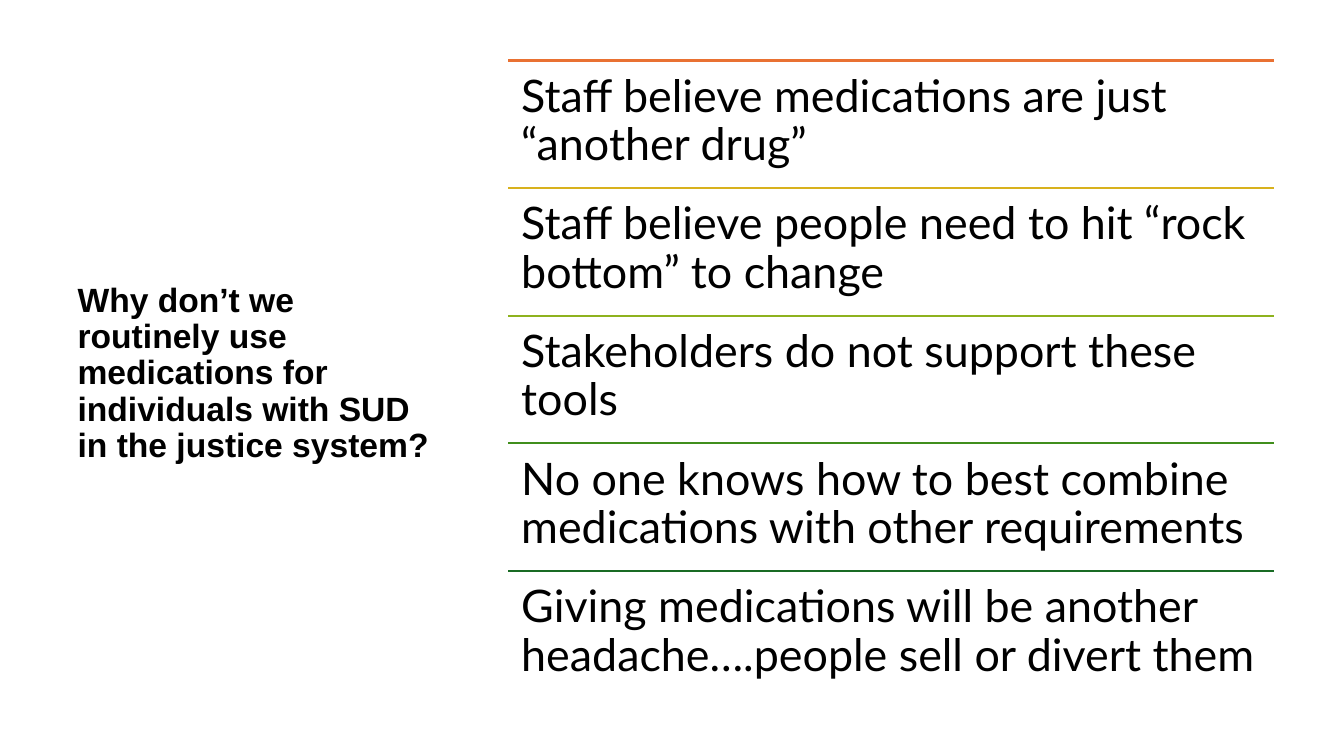
from dataclasses import dataclass

from lxml.etree import SubElement
from pptx import Presentation
from pptx.dml.color import RGBColor
from pptx.enum.shapes import MSO_CONNECTOR
from pptx.enum.text import MSO_ANCHOR, MSO_AUTO_SIZE, PP_ALIGN
from pptx.oxml.ns import qn
from pptx.util import Inches, Pt


@dataclass(frozen=True)
class Theme:
    text: str = "000000"
    title_font: str = "Arial"
    title_size: int = 24
    body_font: str = "Lato"
    body_size: int = 32
    rule_width: float = 1.5
    line_spacing: float = 0.9


@dataclass(frozen=True)
class Reason:
    text: str
    color: str


THEME = Theme()
TITLE = "Why don’t we routinely use medications for individuals with SUD in the justice system?"
REASONS = [
    Reason("Staff believe medications are just “another drug”", "E97132"),
    Reason("Staff believe people need to hit “rock bottom” to change", "D8B11D"),
    Reason("Stakeholders do not support these tools", "8EB21E"),
    Reason("No one knows how to best combine medications with other requirements", "408E1C"),
    Reason("Giving medications will be another headache….people sell or divert them", "196B24"),
]
TOP, HEIGHT = 0.6, 6.33
LIST_LEFT, LIST_WIDTH = 5.04, 7.6
ROW_HEIGHT = HEIGHT / len(REASONS)
INSET = 0.13


def write_text(tf, text: str, font: str, size: int, bold: bool = False) -> None:
    tf.text = text
    tf.word_wrap = True
    tf.auto_size = MSO_AUTO_SIZE.NONE
    p = tf.paragraphs[0]
    p.alignment = PP_ALIGN.LEFT
    p.line_spacing = THEME.line_spacing
    r = p.runs[0]
    r.font.name = font
    r.font.size = Pt(size)
    r.font.bold = bold
    r.font.color.rgb = RGBColor.from_string(THEME.text)


def add_title(slide) -> None:
    sp = slide.shapes.title
    sp.left, sp.top = Inches(0.67), Inches(TOP)
    sp.width, sp.height = Inches(3.82), Inches(HEIGHT)
    tf = sp.text_frame
    write_text(tf, TITLE, THEME.title_font, THEME.title_size, bold=True)
    tf.vertical_anchor = MSO_ANCHOR.MIDDLE
    tf.margin_top, tf.margin_bottom = Inches(0.05), Inches(0.16)


def add_reason(slide, reason: Reason, top: float) -> None:
    rule = slide.shapes.add_connector(
        MSO_CONNECTOR.STRAIGHT,
        Inches(LIST_LEFT), Inches(top), Inches(LIST_LEFT + LIST_WIDTH), Inches(top),
    )
    rule.line.color.rgb = RGBColor.from_string(reason.color)
    rule.line.width = Pt(THEME.rule_width)
    SubElement(rule._element.spPr, qn("a:effectLst"))

    sp = slide.shapes.add_textbox(
        Inches(LIST_LEFT), Inches(top), Inches(LIST_WIDTH), Inches(ROW_HEIGHT)
    )
    tf = sp.text_frame
    write_text(tf, reason.text, THEME.body_font, THEME.body_size)
    tf.vertical_anchor = MSO_ANCHOR.TOP
    tf.margin_left = tf.margin_right = Inches(INSET)
    tf.margin_top = tf.margin_bottom = Inches(INSET)


def main() -> None:
    prs = Presentation()
    prs.slide_width, prs.slide_height = Inches(13.33), Inches(7.5)
    slide = prs.slides.add_slide(prs.slide_layouts.get_by_name("Title Only"))
    add_title(slide)
    for i, reason in enumerate(REASONS):
        add_reason(slide, reason, TOP + i * ROW_HEIGHT)
    prs.save("out.pptx")


if __name__ == "__main__":
    main()
